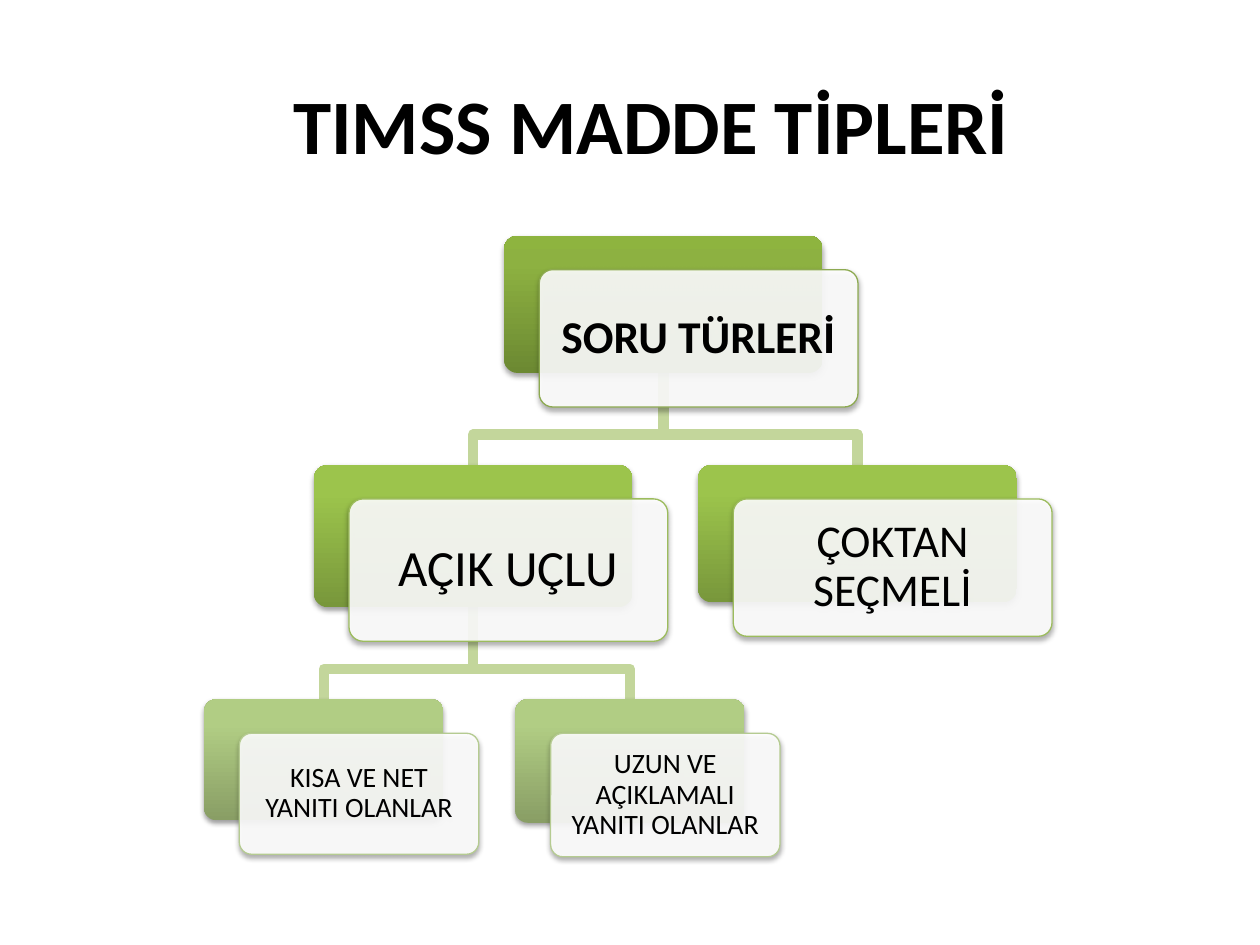
import copy

import pptx
import pptx.dml.color
import pptx.enum.shapes
import pptx.enum.text
import pptx.oxml
import pptx.oxml.ns
import pptx.util
from pptx.util import Inches

CARD_OFFSET = (0.28, 0.27)
BRANCH_RISE = 0.24
LEVELS = [
    {"stops": ("6C8932", "8DB141", "8EB43F"), "outline": "8DAA51", "shadow": (35, 1.8)},
    {"stops": ("78973B", "9CC44C", "9EC74A"), "outline": "9CBC5D", "shadow": (38, 1.6)},
    {"stops": ("899E65", "B1CD84", "B3D083"), "outline": "B5CB91", "shadow": (38, 1.6)},
]
NODES = {
    "types": {"text": "SORU TÜRLERİ", "box": (4, 1.87, 2.53, 1.09), "level": 0,
              "parent": None, "size": 26, "bold": True, "inset": 0.14},
    "open": {"text": "AÇIK UÇLU", "box": (2.49, 3.69, 2.53, 1.13), "level": 1,
             "parent": "types", "size": 29, "bold": False, "inset": 0.15},
    "short": {"text": "KISA VE NET YANITI OLANLAR", "box": (1.62, 5.55, 1.9, 0.96), "level": 2,
              "parent": "open", "size": 16, "bold": False, "inset": 0.1},
    "long": {"text": "UZUN VE AÇIKLAMALI YANITI OLANLAR", "box": (4.09, 5.55, 1.82, 0.98),
             "level": 2, "parent": "open", "size": 16, "bold": False, "inset": 0.1},
    "choice": {"text": "ÇOKTAN SEÇMELİ", "box": (5.54, 3.69, 2.53, 1.09), "level": 1,
               "parent": "types", "size": 26, "bold": False, "inset": 0.14},
}


def rgb(value):
    """Return the colour for a hex string."""
    return pptx.dml.color.RGBColor.from_string(value)


def assign(target, values):
    """Set each named attribute on the target."""
    for name, value in values.items():
        setattr(target, name, value)


def write_text(shape, text, size, bold, inset, spacing):
    """Put one centred paragraph in the middle of a shape."""
    frame = shape.text_frame
    margins = {f"margin_{side}": Inches(inset) for side in ("left", "right", "top", "bottom")}
    assign(frame, {**margins, "word_wrap": True,
                   "vertical_anchor": pptx.enum.text.MSO_ANCHOR.MIDDLE})
    paragraph = frame.paragraphs[0]
    assign(paragraph, {"text": text, "line_spacing": spacing,
                       "alignment": pptx.enum.text.PP_ALIGN.CENTER})
    assign(paragraph.runs[0].font, {"name": "Calibri", "size": pptx.util.Pt(size), "bold": bold})
    paragraph.runs[0].font.color.rgb = rgb("000000")


def add_title(slide, text):
    """Add the slide heading."""
    heading = slide.shapes.add_textbox(Inches(0.67), Inches(0.36), Inches(9), Inches(1.25))
    write_text(heading, text, 44, True, 0.1, 1.0)


def add_branch(slide, parent, child):
    """Draw the elbow from a parent's bottom centre to a child's top centre."""
    left, top, width, height = parent
    start_x, start_y = left + width / 2, top + height
    end_x, end_y = child[0] + child[2] / 2, child[1]
    bend_y = end_y - BRANCH_RISE
    builder = slide.shapes.build_freeform(Inches(start_x), Inches(start_y))
    bends = [(start_x, bend_y), (end_x, bend_y), (end_x, end_y)]
    builder.add_line_segments([(Inches(x), Inches(y)) for x, y in bends], close=False)
    branch = builder.convert_to_shape()
    branch.shadow.inherit = False
    branch.fill.background()
    branch.line.color.rgb = rgb("C3D69B")
    branch.line.width = pptx.util.Pt(6)


def add_shadow(shape, opacity, distance):
    """Give a shape a soft black shadow below it."""
    shape.shadow.inherit = False
    effects = shape._element.spPr.find(pptx.oxml.ns.qn("a:effectLst"))
    effects.append(pptx.oxml.parse_xml(
        f'<a:outerShdw {pptx.oxml.ns.nsdecls("a")} blurRad="{pptx.util.Pt(3.1)}" '
        f'dist="{pptx.util.Pt(distance)}" dir="5400000" rotWithShape="0">'
        f'<a:srgbClr val="000000"><a:alpha val="{opacity * 1000}"/></a:srgbClr></a:outerShdw>'))


def add_rounded(slide, box, shadow):
    """Add a rounded rectangle with a shadow."""
    shape = slide.shapes.add_shape(pptx.enum.shapes.MSO_SHAPE.ROUNDED_RECTANGLE,
                                   *(Inches(length) for length in box))
    shape.adjustments[0] = 0.1
    add_shadow(shape, *shadow)
    return shape


def fill_gradient(shape, colours):
    """Fill a shape with three colours from bottom to top."""
    shape.fill.gradient()
    shape.fill.gradient_angle = 90
    stop_list = next(shape._element.spPr.iter(pptx.oxml.ns.qn("a:gsLst")))
    stop_list.append(copy.deepcopy(stop_list[0]))
    for stop, position, colour in zip(shape.fill.gradient_stops, (0, 0.8, 1), colours):
        stop.position = position
        stop.color.rgb = rgb(colour)


def add_node(slide, node):
    """Add a green backing and the translucent text card over it."""
    level = LEVELS[node["level"]]
    left, top, width, height = node["box"]
    backing = add_rounded(slide, node["box"], level["shadow"])
    fill_gradient(backing, level["stops"])
    backing.line.fill.background()

    card_box = (left + CARD_OFFSET[0], top + CARD_OFFSET[1], width, height)
    card = add_rounded(slide, card_box, (35, 1.8))
    card.fill.solid()
    card.fill.fore_color.rgb = rgb("FFFFFF")
    colour = next(card._element.spPr.iter(pptx.oxml.ns.qn("a:srgbClr")))
    colour.append(pptx.oxml.parse_xml(
        f'<a:alpha {pptx.oxml.ns.nsdecls("a")} val="90000"/>'))
    card.line.color.rgb = rgb(level["outline"])
    card.line.width = pptx.util.Pt(0.75)
    write_text(card, node["text"], node["size"], node["bold"], node["inset"], 0.9)


def main():
    """Build and save the slide."""
    deck = pptx.Presentation()
    assign(deck, {"slide_width": Inches(10), "slide_height": Inches(7.5)})
    slide = deck.slides.add_slide(deck.slide_layouts[6])
    add_title(slide, "TIMSS MADDE TİPLERİ")
    for node in NODES.values():
        if node["parent"]:
            add_branch(slide, NODES[node["parent"]]["box"], node["box"])
    for node in NODES.values():
        add_node(slide, node)
    deck.save("out.pptx")


if __name__ == "__main__":
    main()
